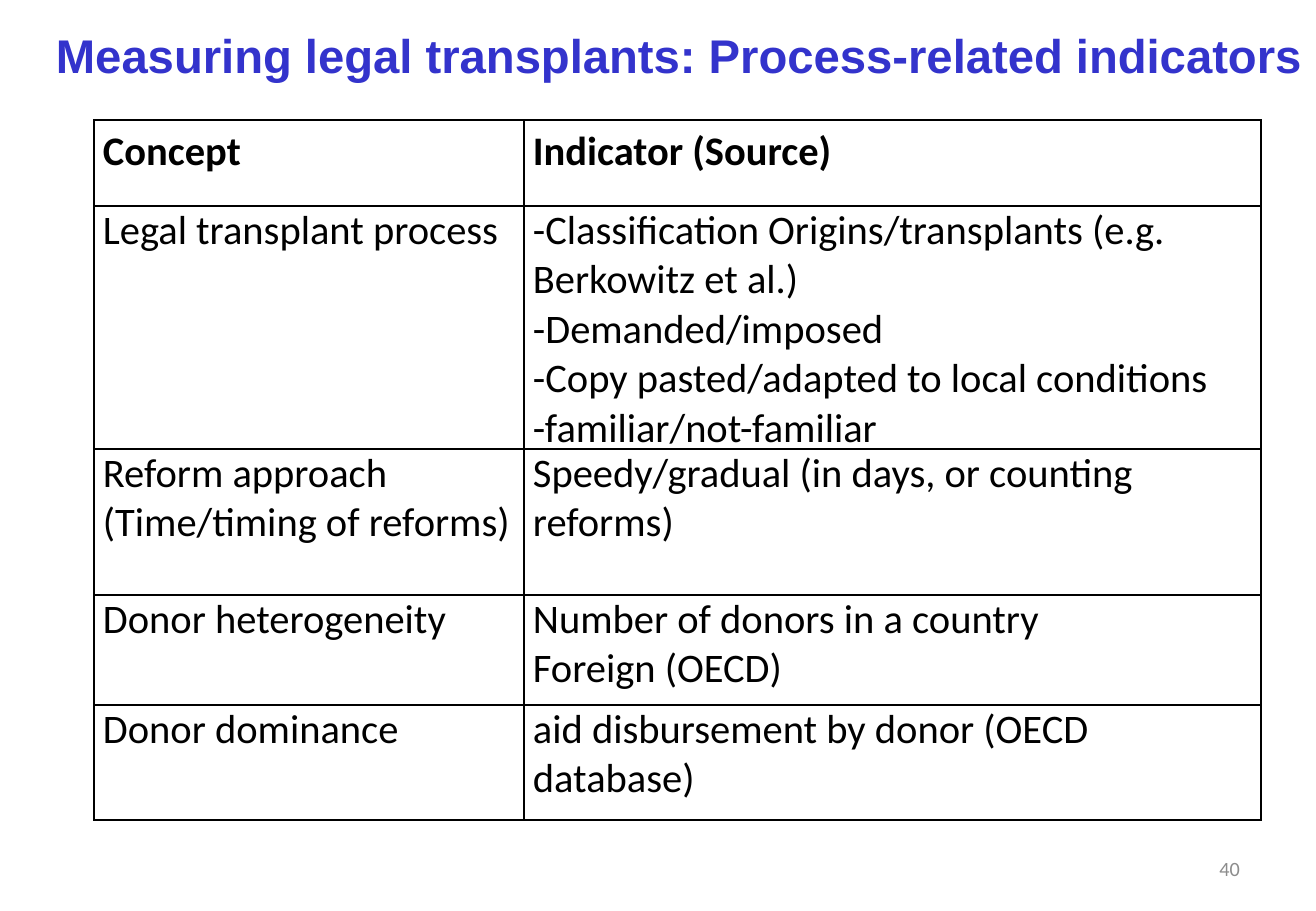
from lxml import etree
from pptx import Presentation
from pptx.dml.color import RGBColor
from pptx.enum.text import MSO_ANCHOR, PP_ALIGN
from pptx.oxml.ns import qn
from pptx.util import Pt

EMU_PER_PX = 7526
TITLE_BLUE = RGBColor(0x33, 0x33, 0xCC)
BLACK = RGBColor(0, 0, 0)
NUMBER_GRAY = RGBColor(0x8C, 0x8C, 0x8C)
LEFT, RIGHT = PP_ALIGN.LEFT, PP_ALIGN.RIGHT
TOP, MIDDLE = MSO_ANCHOR.TOP, MSO_ANCHOR.MIDDLE

COLUMN_WIDTHS = (430, 737)
ROW_HEIGHTS = (86, 243, 146, 110, 115)
INDICATORS = (
    ("Concept", "Indicator (Source)"),
    ("Legal transplant process",
     "-Classification Origins/transplants (e.g. Berkowitz et al.)\n"
     "-Demanded/imposed\n"
     "-Copy pasted/adapted to local conditions\n"
     "-familiar/not-familiar"),
    ("Reform approach (Time/timing of reforms)",
     "Speedy/gradual (in days, or counting reforms)"),
    ("Donor heterogeneity", "Number of donors in a country\nForeign (OECD)"),
    ("Donor dominance", "aid disbursement by donor (OECD database)"),
)


def px(length):
    return length * EMU_PER_PX


def format_text(frame, font_name, size, color, bold=False, align=LEFT):
    for para in frame.paragraphs:
        para.alignment = align
        for span in para.runs:
            span.font.name = font_name
            span.font.size = Pt(size)
            span.font.color.rgb = color
            span.font.bold = bold


def add_text(page, text, bounds, anchor):
    box = page.shapes.add_textbox(*map(px, bounds))
    frame = box.text_frame
    frame.word_wrap = True
    frame.vertical_anchor = anchor
    frame.margin_left = frame.margin_right = px(10)
    frame.margin_top = frame.margin_bottom = px(10)
    frame.text = text
    return frame


def add_borders(cell):
    properties = cell._tc.get_or_add_tcPr()
    for position, side in enumerate(("lnL", "lnR", "lnT", "lnB")):
        line = etree.Element(qn(f"a:{side}"), w=str(Pt(1)))
        fill = etree.SubElement(line, qn("a:solidFill"))
        etree.SubElement(fill, qn("a:srgbClr"), val=str(BLACK))
        properties.insert(position, line)


def fill_cell(cell, text, is_header):
    cell.margin_left = cell.margin_right = px(9)
    cell.margin_top = cell.margin_bottom = 0
    cell.vertical_anchor = TOP
    cell.fill.background()
    add_borders(cell)
    cell.text_frame.text = text
    format_text(cell.text_frame, "Calibri", 24, BLACK, bold=is_header)
    if is_header:
        cell.text_frame.paragraphs[0].line_spacing = 1.15


def add_indicator_table(page, left, top):
    table = page.shapes.add_table(
        len(ROW_HEIGHTS), len(COLUMN_WIDTHS), px(left), px(top),
        px(sum(COLUMN_WIDTHS)), px(sum(ROW_HEIGHTS))).table
    table.first_row = False
    table.horz_banding = False
    for column, width in zip(table.columns, COLUMN_WIDTHS):
        column.width = px(width)
    for row_index, (row, height) in enumerate(zip(table.rows, ROW_HEIGHTS)):
        row.height = px(height)
        for cell, text in zip(row.cells, INDICATORS[row_index]):
            fill_cell(cell, text, row_index == 0)


def main():
    deck = Presentation()
    deck.slide_width, deck.slide_height = px(1316), px(911)
    page = deck.slides.add_slide(deck.slide_layouts[6])

    title = add_text(page, "Measuring legal transplants: Process-related indicators",
                     (46, 16, 1378, 77), TOP)
    title.paragraphs[0].space_before = Pt(2)
    format_text(title, "Arial", 28, TITLE_BLUE, bold=True)

    number = add_text(page, "40", (943, 844, 307, 49), MIDDLE)
    format_text(number, "Calibri", 12, NUMBER_GRAY, align=RIGHT)

    add_indicator_table(page, 94, 120)
    deck.save("out.pptx")


if __name__ == "__main__":
    main()
